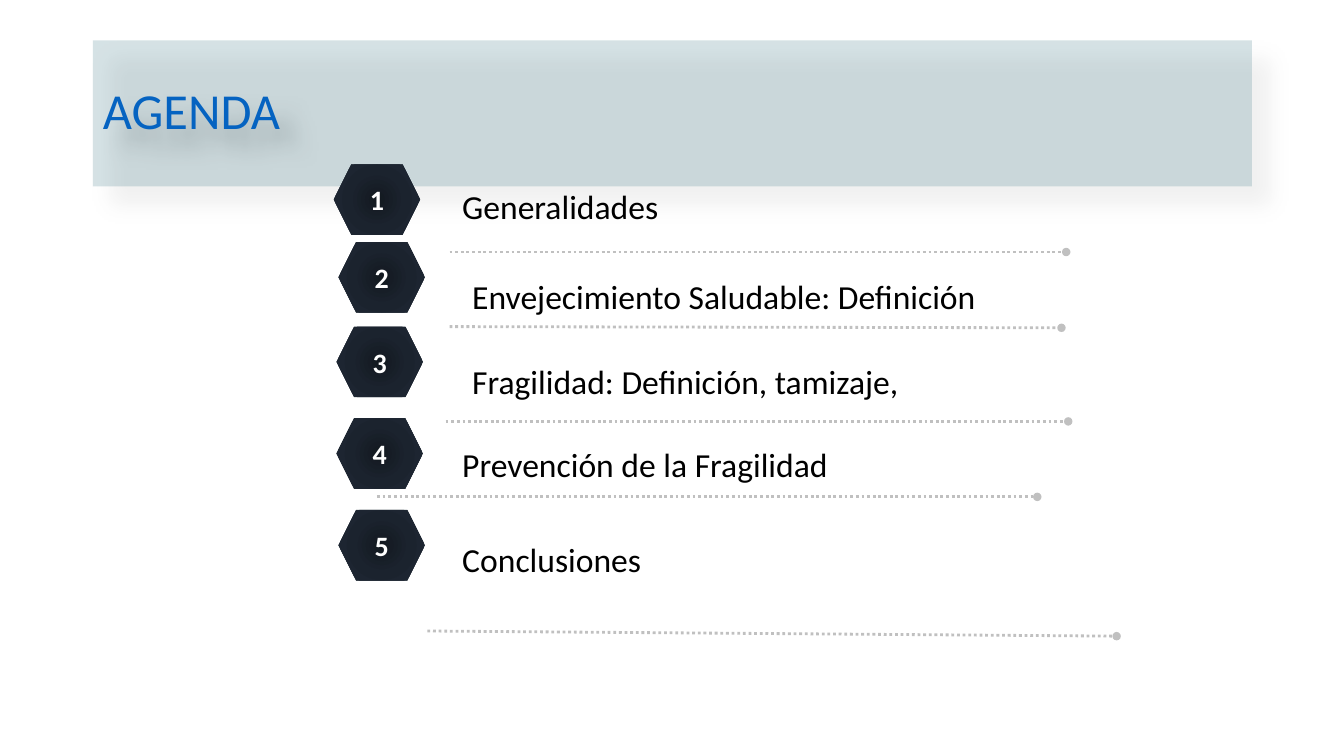
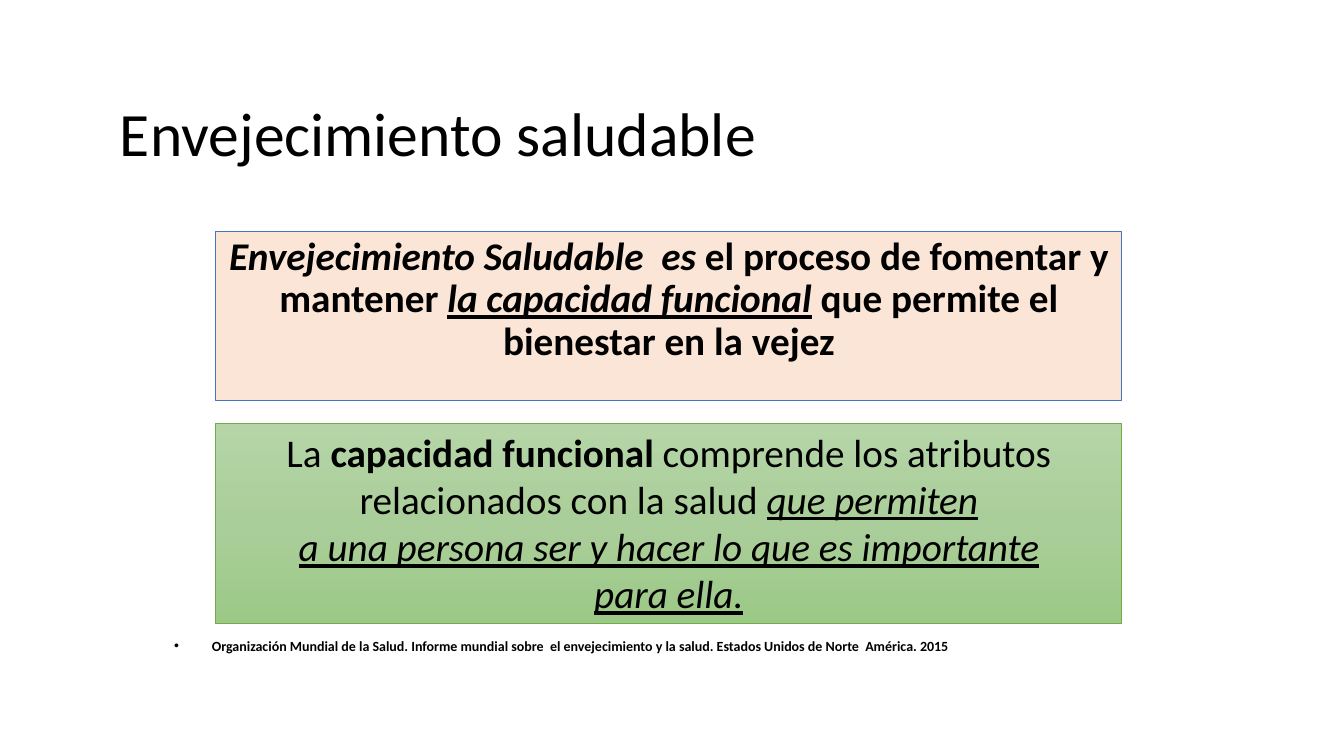
from lxml.etree import SubElement
from pptx import Presentation
from pptx.dml.color import RGBColor
from pptx.enum.dml import MSO_LINE_DASH_STYLE as Dash
from pptx.enum.shapes import MSO_CONNECTOR as Connector, MSO_SHAPE as Shape
from pptx.enum.text import MSO_ANCHOR as Anchor, MSO_AUTO_SIZE as AutoSize, PP_ALIGN as Align
from pptx.oxml.ns import qn
from pptx.util import Cm, Pt

FONT = "Calibri"
BLACK, WHITE, BLUE = "000000", "FFFFFF", "0563C1"
BAND, DOTTED = "256979", "C0C0C0"
PEACH, PEACH_EDGE, GREEN_EDGE = "FBE5D6", "4472C4", "70AD47"
NAVY_STOPS = [(0, "131920"), (50, "1B232E"), (100, "212A36")]
GREEN_STOPS = [(0, "B5D5A7"), (50, "AACE9A"), (100, "9CC987")]

TITLE_SIZE = (29.21, 3.68)
HEXAGON_SIZE = (2.18, 1.78)
AGENDA = [
    ("Generalidades", (8.41, 4.14), (11.4, 4.55), (11.33, 6.35, 26.87, 6.35)),
    ("Envejecimiento Saludable: Definición", (8.53, 6.1), (11.65, 6.83), (11.33, 8.23, 26.75, 8.26)),
    ("Fragilidad: Definición, tamizaje,", (8.48, 8.23), (11.65, 8.97), (11.23, 10.62, 26.92, 10.62)),
    ("Prevención de la Fragilidad", (8.48, 10.54), (11.4, 11.07), (9.5, 12.52, 26.14, 12.52)),
    ("Conclusiones", (8.53, 12.85), (11.4, 13.46), (10.77, 15.9, 28.14, 16.03)),
]
DEFINITION = [[
    ("Envejecimiento Saludable  es ", "bi"),
    ("el proceso de fomentar y mantener ", "b"),
    ("la capacidad funcional", "biu"),
    (" que permite el bienestar en la vejez", "b"),
]]
CAPACITY = [
    [("La ", ""), ("capacidad funcional ", "b"), ("comprende los atributos", "")],
    [("relacionados con la salud ", ""), ("que permiten", "iu")],
    [("a una persona ser y hacer lo que es importante", "iu")],
    [("para ella.", "iu")],
]
SOURCE = ("Organización Mundial de la Salud. Informe mundial sobre  el envejecimiento y la salud. "
          "Estados Unidos de Norte  América. 2015")


def color(value):
    return RGBColor.from_string(value)


def set_font(font, size, tint=BLACK, bold=False):
    font.name, font.size, font.bold = FONT, Pt(size), bold
    font.color.rgb = color(tint)


def add_color(parent, value, alpha):
    tint = SubElement(parent, qn("a:srgbClr"), val=value)
    SubElement(tint, qn("a:alpha"), val=str(alpha * 1000))


def fill_gradient(shape, stops, radial=False):
    shape.fill.gradient()
    gradient = shape._element.spPr.find(qn("a:gradFill"))
    for child in list(gradient):
        gradient.remove(child)
    stop_list = SubElement(gradient, qn("a:gsLst"))
    for position, value in stops:
        stop = SubElement(stop_list, qn("a:gs"), pos=str(position * 1000))
        SubElement(stop, qn("a:srgbClr"), val=value)
    if radial:
        center = SubElement(gradient, qn("a:path"), {"path": "circle"})
        SubElement(center, qn("a:fillToRect"), dict.fromkeys("ltrb", "50000"))
    else:
        SubElement(gradient, qn("a:lin"), ang="5400000", scaled="0")


def add_titled_slide(deck, text, left, top, size, tint=BLACK):
    page = deck.slides.add_slide(deck.slide_layouts[5])
    title = page.shapes.title
    title.left, title.top = Cm(left), Cm(top)
    title.width, title.height = map(Cm, TITLE_SIZE)
    frame = title.text_frame
    frame.text = text
    frame.auto_size = AutoSize.NONE
    frame.vertical_anchor = Anchor.MIDDLE
    para = frame.paragraphs[0]
    para.alignment, para.line_spacing = Align.LEFT, 0.9
    set_font(para.font, size, tint)
    return page


def style_band(title):
    title.fill.solid()
    title.fill.fore_color.rgb = color(BAND)
    properties = title._element.spPr
    tint = properties.find(qn("a:solidFill")).find(qn("a:srgbClr"))
    SubElement(tint, qn("a:alpha"), val="19000")
    title.shadow.inherit = False
    shadow = SubElement(properties.find(qn("a:effectLst")), qn("a:outerShdw"),
                        blurRad=str(Pt(15)), dist=str(Pt(18)), dir="2700000",
                        algn="tl", rotWithShape="0")
    add_color(shadow, BLACK, 30)


def add_text_box(page, left, top, width, height):
    box = page.shapes.add_textbox(Cm(left), Cm(top), Cm(width), Cm(height))
    box.text_frame.word_wrap = True
    return box


def add_label(page, text, left, top):
    para = add_text_box(page, left, top, 15.5, 1.27).text_frame.paragraphs[0]
    para.text = text
    set_font(para.font, 24)


def add_hexagon(page, number, left, top):
    hexagon = page.shapes.add_shape(Shape.HEXAGON, Cm(left), Cm(top), *map(Cm, HEXAGON_SIZE))
    hexagon.shadow.inherit = False
    hexagon.line.fill.background()
    fill_gradient(hexagon, NAVY_STOPS, radial=True)
    hexagon.text_frame.vertical_anchor = Anchor.MIDDLE
    para = hexagon.text_frame.paragraphs[0]
    para.text = str(number)
    para.alignment = Align.CENTER
    set_font(para.font, 20, WHITE, bold=True)


def add_dotted_line(page, ends):
    rule = page.shapes.add_connector(Connector.STRAIGHT, *map(Cm, ends))
    rule.line.color.rgb = color(DOTTED)
    rule.line.width = Pt(2)
    rule.line.dash_style = Dash.ROUND_DOT
    properties = rule._element.spPr
    SubElement(properties.find(qn("a:ln")), qn("a:tailEnd"), type="oval")
    SubElement(properties, qn("a:effectLst"))


def add_panel(page, lines, top, height, edge, spacing):
    panel = add_text_box(page, 5.44, top, 22.83, height)
    panel.line.color.rgb = color(edge)
    panel.line.width = Pt(0.5)
    frame = panel.text_frame
    for index, spans in enumerate(lines):
        para = frame.add_paragraph() if index else frame.paragraphs[0]
        para.alignment, para.line_spacing = Align.CENTER, spacing
        set_font(para.font, 28)
        for text, marks in spans:
            span = para.add_run()
            span.text = text
            span.font.bold = "b" in marks
            span.font.italic = "i" in marks
            span.font.underline = "u" in marks
    return panel


def add_source(page):
    para = add_text_box(page, 4.14, 15.93, 23.01, 2.21).text_frame.paragraphs[0]
    para.text = SOURCE
    properties = para._p.get_or_add_pPr()
    properties.set("marL", str(Cm(0.95)))
    properties.set("indent", str(Cm(-0.95)))
    SubElement(properties, qn("a:buFont"), typeface="Arial")
    SubElement(properties, qn("a:buChar"), char="•")
    set_font(para.font, 10, bold=True)


def build_agenda(deck):
    page = add_titled_slide(deck, "AGENDA", 2.34, 1.02, 36, BLUE)
    style_band(page.shapes.title)
    for number, (text, hexagon_at, label_at, ends) in enumerate(AGENDA, 1):
        add_dotted_line(page, ends)
        add_hexagon(page, number, *hexagon_at)
        add_label(page, text, *label_at)


def build_healthy_ageing(deck):
    page = add_titled_slide(deck, "Envejecimiento saludable", 2.77, 1.6, 44)
    definition = add_panel(page, DEFINITION, 5.84, 4.24, PEACH_EDGE, 0.9)
    definition.fill.solid()
    definition.fill.fore_color.rgb = color(PEACH)
    capacity = add_panel(page, CAPACITY, 10.67, 5.05, GREEN_EDGE, 1.0)
    fill_gradient(capacity, GREEN_STOPS)
    add_source(page)


def main():
    deck = Presentation()
    deck.slide_width, deck.slide_height = Cm(33.87), Cm(19.05)
    build_agenda(deck)
    build_healthy_ageing(deck)
    deck.save("out.pptx")


if __name__ == "__main__":
    main()
